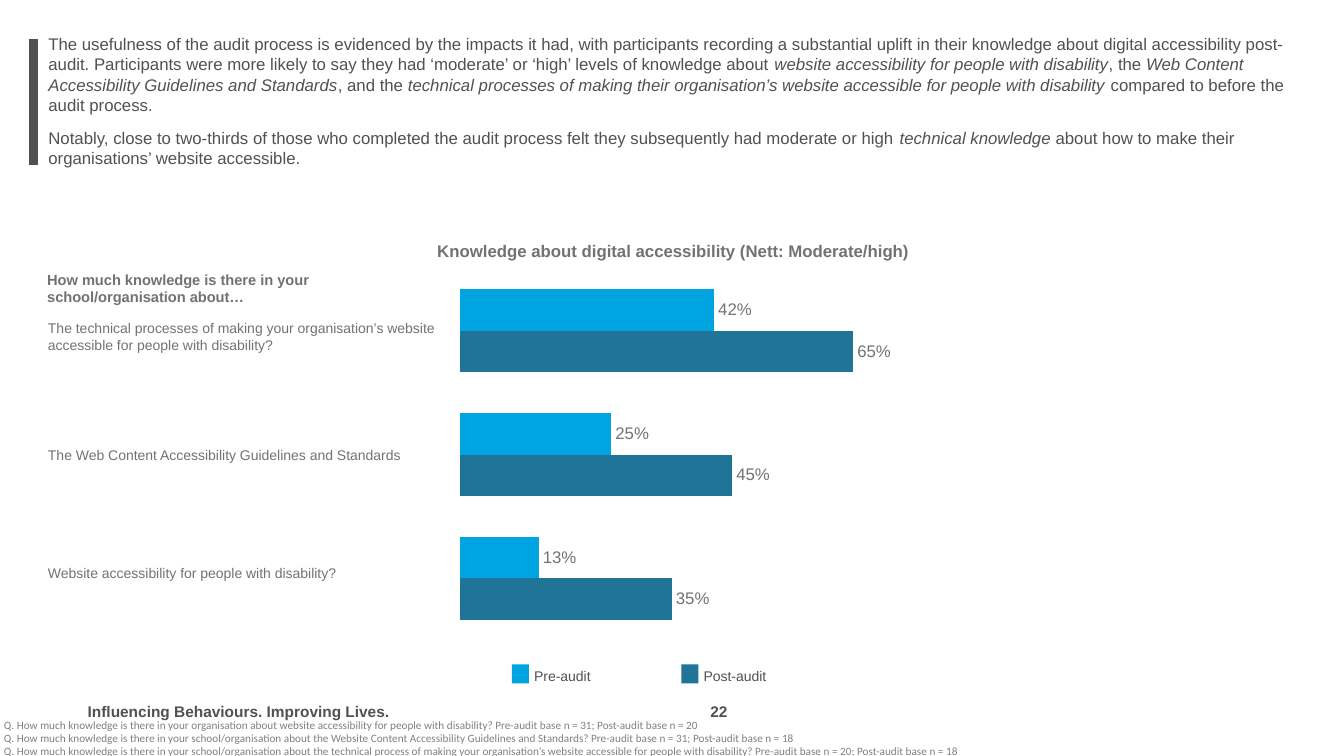
from dataclasses import dataclass, field
from typing import Any

from lxml.etree import SubElement
from pptx import Presentation
from pptx.chart.data import CategoryChartData as Data
from pptx.dml.color import RGBColor as Rgb
from pptx.enum.chart import XL_CHART_TYPE as Kind, XL_LABEL_POSITION as Spot
from pptx.enum.shapes import MSO_CONNECTOR as Link, MSO_SHAPE as Form
from pptx.enum.text import MSO_ANCHOR as Anchor, PP_ALIGN as Align
from pptx.oxml.ns import qn
from pptx.util import Cm, Pt

HUES = {"dark": "515154", "mid": "767171", "note": "808080",
        "pre": "00A4E0", "post": "1F7498"}

SMALL = {"size": Pt(10), "name": "Arial"}
BODY = {"size": Pt(12), "name": "Arial"}
HEAD = BODY | {"bold": True}
ASK = HEAD | {"size": Pt(10.5)}
FOOT = HEAD | {"size": Pt(11)}
NOTE = {"size": Pt(8), "name": "Calibri"}

TIGHT = {f"margin_{side}": Cm(0.1) for side in ("left", "top", "right", "bottom")}
MID = {"vertical_anchor": Anchor.MIDDLE}
CENTRE = {"alignment": Align.CENTER}
LOOSE = {"line_spacing": 1.2}


@dataclass
class Box:
    """A text box in centimetres; asterisks in its text switch italics."""
    left: float
    top: float
    width: float
    height: float
    text: list[str]
    hue: str
    font: dict[str, Any]
    frame: dict[str, Any] = field(default_factory=lambda: MID)
    para: dict[str, Any] = field(default_factory=dict)


@dataclass
class Key:
    text: str
    hue: str
    left: float


INTRO = [
    "The usefulness of the audit process is evidenced by the impacts it had, with "
    "participants recording a substantial uplift in their knowledge about digital "
    "accessibility post-audit. Participants were more likely to say they had "
    "‘moderate’ or ‘high’ levels of knowledge about *website accessibility for "
    "people with disability*, the *Web Content Accessibility Guidelines and "
    "Standards*, and the *technical processes of making their organisation’s "
    "website accessible for people with disability *compared to before the audit "
    "process.",
    "Notably, close to two-thirds of those who completed the audit process felt "
    "they subsequently had moderate or high *technical knowledge *about how to "
    "make their organisations’ website accessible.",
]
TOPICS = [
    "The technical processes of making your organisation’s website accessible "
    "for people with disability?",
    "The Web Content Accessibility Guidelines and Standards",
    "Website accessibility for people with disability?",
]
NOTES = [
    "Q. How much knowledge is there in your organisation about website "
    "accessibility for people with disability? Pre-audit base n = 31; "
    "Post-audit base n = 20",
    "Q. How much knowledge is there in your school/organisation about the Website "
    "Content Accessibility Guidelines and Standards? Pre-audit base n = 31; "
    "Post-audit base n = 18",
    "Q. How much knowledge is there in your school/organisation about the technical "
    "process of making your organisation’s website accessible for people with "
    "disability? Pre-audit base n = 20; Post-audit base n = 18",
]
BOXES = [
    Box(2.11, 17.5, 10.03, 0.76, ["Influencing Behaviours. Improving Lives."],
        "dark", FOOT, MID | TIGHT, LOOSE),
    Box(0, 18.03, 30.33, 0.99, NOTES, "note", NOTE, TIGHT, {"line_spacing": Pt(9)}),
    Box(7.85, 5.74, 18.24, 1.17,
        ["Knowledge about digital accessibility (Nett: Moderate/high)"],
        "mid", HEAD, para=CENTRE),
    *(Box(0.96, 8.1 + 2.98 * row, 11.46, 0.76, [topic], "mid", SMALL)
      for row, topic in enumerate(TOPICS)),
    Box(0.97, 0.61, 32.05, 3.86, INTRO, "dark", BODY, para={"space_after": Pt(9)}),
    Box(0.94, 6.68, 10.46, 1.17,
        ["How much knowledge is there in your school/organisation about…"],
        "mid", ASK),
    Box(17.37, 17.5, 1.5, 0.76, ["22"], "dark", FOOT, MID | TIGHT, LOOSE | CENTRE),
]
KEYS = [Key("Pre-audit", "pre", 12.9), Key("Post-audit", "post", 17.17)]
BARS = {"post": ("Series 1", (0.35, 0.45, 0.65)),
        "pre": ("Series 2", (0.13, 0.25, 0.42))}


def tint(hue: str) -> Rgb:
    return Rgb.from_string(HUES[hue])


def apply(item: Any, style: dict[str, Any]) -> None:
    for name, value in style.items():
        setattr(item, name, value)


def style_font(font: Any, style: dict[str, Any], hue: str) -> None:
    apply(font, style)
    font.color.rgb = tint(hue)


def add_box(slide: Any, box: Box) -> None:
    place = map(Cm, (box.left, box.top, box.width, box.height))
    frame = slide.shapes.add_textbox(*place).text_frame
    apply(frame, {"word_wrap": True} | box.frame)
    for num, text in enumerate(box.text):
        para = frame.add_paragraph() if num else frame.paragraphs[0]
        apply(para, box.para)
        for part, words in enumerate(text.split("*")):
            run = para.add_run()
            run.text = words
            style_font(run.font, box.font, box.hue)
            run.font.italic = part % 2 == 1


def add_key(slide: Any, key: Key) -> None:
    """Draw a legend swatch with its label."""
    swatch = slide.shapes.add_shape(
        Form.RECTANGLE, Cm(key.left), Cm(16.74), Cm(0.43), Cm(0.48))
    swatch.shadow.inherit = False
    swatch.fill.solid()
    swatch.fill.fore_color.rgb = tint(key.hue)
    swatch.line.fill.background()
    add_box(slide, Box(key.left + 0.46, 16.64, 4.5, 1.32, [key.text],
                       "dark", SMALL, TIGHT, LOOSE))


def add_rule(slide: Any) -> None:
    rule = slide.shapes.add_connector(
        Link.STRAIGHT, Cm(0.84), Cm(0.99), Cm(0.84), Cm(4.17))
    rule.line.width = Pt(6)
    rule.line.color.rgb = tint("dark")
    SubElement(rule._element.spPr, qn("a:effectLst"))


def set_plot(chart: Any) -> None:
    """Fix the inner plot area so the bars fill the chart frame."""
    area = chart._chartSpace.chart.plotArea
    for old in area.findall(qn("c:layout")):
        area.remove(old)
    layout = area.makeelement(qn("c:layout"), {})
    area.insert(0, layout)
    manual = SubElement(layout, qn("c:manualLayout"))
    values = {"layoutTarget": "inner", "xMode": "edge", "yMode": "edge",
              "x": "0.02", "y": "0.02", "w": "0.96", "h": "0.96"}
    for name, value in values.items():
        SubElement(manual, qn(f"c:{name}")).set("val", value)


def add_bars(slide: Any) -> None:
    data = Data(number_format="0%")
    data.categories = ["1", "2", "3"]
    for name, values in BARS.values():
        data.add_series(name, values)
    chart = slide.shapes.add_chart(
        Kind.BAR_CLUSTERED, Cm(11.28), Cm(6.58), Cm(15.88), Cm(9.75), data).chart
    apply(chart, {"has_legend": False, "has_title": False})
    style_font(chart.font, SMALL, "dark")
    bare = {"visible": False, "has_major_gridlines": False}
    apply(chart.category_axis, bare)
    apply(chart.value_axis, bare | {"minimum_scale": 0, "maximum_scale": 1,
                                    "major_unit": 1})
    plot = chart.plots[0]
    apply(plot, {"gap_width": 100, "overlap": 0, "vary_by_categories": False})
    for hue, series in zip(BARS, plot.series):
        series.format.fill.solid()
        series.format.fill.fore_color.rgb = tint(hue)
        labels = series.data_labels
        apply(labels, {"show_value": True, "number_format": "0%",
                       "number_format_is_linked": False,
                       "position": Spot.OUTSIDE_END})
        style_font(labels.font, BODY, "mid")
    set_plot(chart)


def main() -> None:
    deck = Presentation()
    apply(deck, {"slide_width": Cm(33.87), "slide_height": Cm(19.05)})
    slide = deck.slides.add_slide(deck.slide_layouts[6])
    add_rule(slide)
    add_bars(slide)
    for box in BOXES:
        add_box(slide, box)
    for key in KEYS:
        add_key(slide, key)
    deck.save("out.pptx")


if __name__ == "__main__":
    main()
